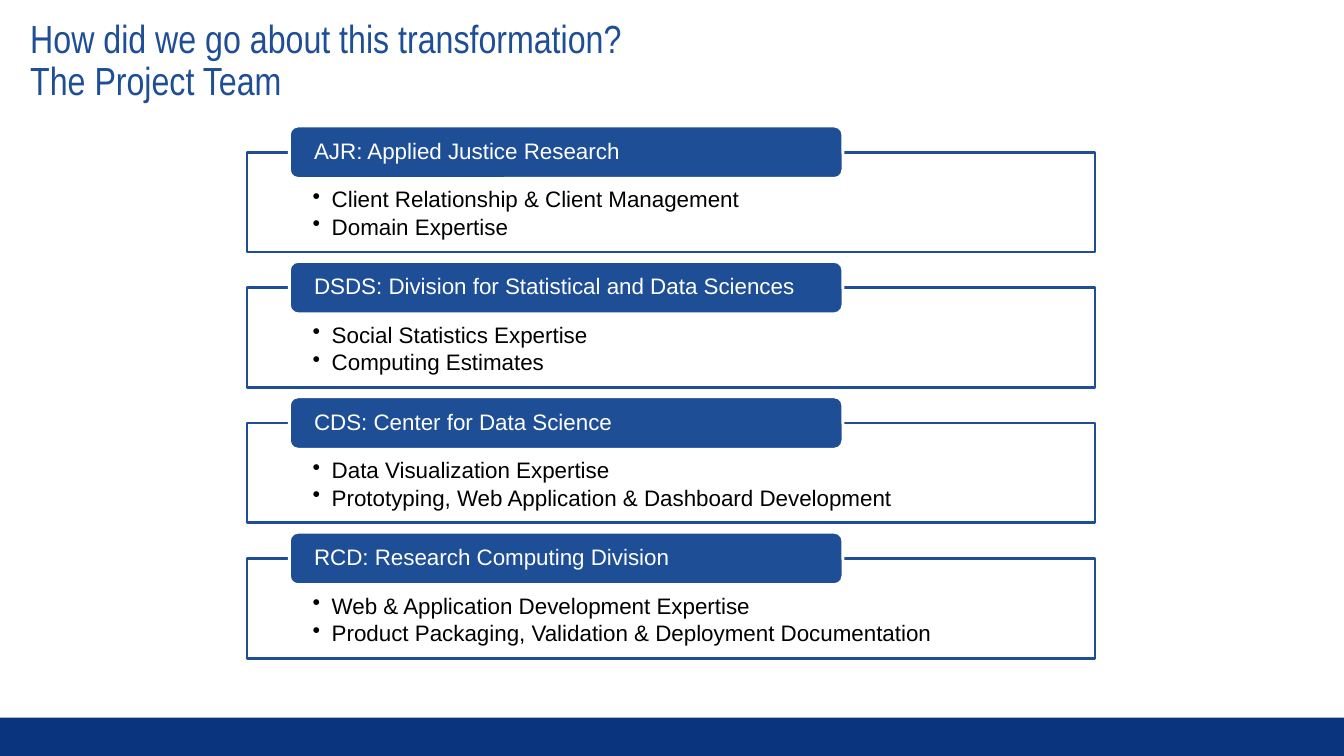
from dataclasses import dataclass

from lxml import etree
from pptx import Presentation
from pptx import util as u
from pptx.dml.color import RGBColor
from pptx.enum import shapes, text
from pptx.oxml import ns
from pptx.shapes.autoshape import Shape
from pptx.slide import Slide

COLOURS = {"blue": "1E4E96", "navy": "0A357E", "white": "FFFFFF", "black": "000000"}
FIRST_TOP, LAST_TOP = 1.51, 5.54


@dataclass(frozen=True)
class Division:
    """One division of the project team and what it brings."""

    name: str
    duties: tuple[str, ...]


DIVISIONS = (
    Division("AJR: Applied Justice Research",
             ("Client Relationship & Client Management", "Domain Expertise")),
    Division("DSDS: Division for Statistical and Data Sciences",
             ("Social Statistics Expertise", "Computing Estimates")),
    Division("CDS: Center for Data Science",
             ("Data Visualization Expertise",
              "Prototyping, Web Application & Dashboard Development")),
    Division("RCD: Research Computing Division",
             ("Web & Application Development Expertise",
              "Product Packaging, Validation & Deployment Documentation")),
)


def colour(name: str) -> RGBColor:
    """Return the named colour."""
    return RGBColor.from_string(COLOURS[name])


def write(shape: Shape, lines: tuple[str, ...], *, ink: str,
          insets: tuple[float, float, float, float], size: float = 16,
          font: str = "Arial", middle: bool = True, bulleted: bool = False,
          space_after: float = 0) -> None:
    """Fill a shape with left-aligned paragraphs in one format."""
    frame = shape.text_frame
    frame.word_wrap = True
    frame.auto_size = text.MSO_AUTO_SIZE.NONE
    frame.vertical_anchor = text.MSO_ANCHOR.MIDDLE if middle else text.MSO_ANCHOR.TOP
    (frame.margin_left, frame.margin_top,
     frame.margin_right, frame.margin_bottom) = map(u.Inches, insets)
    frame.text = "\n".join(lines)
    for paragraph in frame.paragraphs:
        paragraph.alignment = text.PP_ALIGN.LEFT
        paragraph.line_spacing = 0.9
        paragraph.space_after = u.Pt(space_after)
        for run in paragraph.runs:
            run.font.name = font
            run.font.size = u.Pt(size)
            run.font.color.rgb = colour(ink)
        if bulleted:
            properties = paragraph._p.get_or_add_pPr()
            properties.set("marL", str(u.Inches(0.19)))
            properties.set("indent", str(u.Inches(-0.19)))
            etree.SubElement(properties, ns.qn("a:buChar"), char="•")


def add_box(slide: Slide, kind: shapes.MSO_SHAPE,
            place: tuple[float, float, float, float], fill: str,
            outline: str | None = None, opacity: int = 100) -> Shape:
    """Add a filled preset shape, outlined if a colour is given."""
    box = slide.shapes.add_shape(kind, *map(u.Inches, place))
    box.shadow.inherit = False
    box.fill.solid()
    box.fill.fore_color.rgb = colour(fill)
    if opacity < 100:
        shade = box._element.spPr.find(".//" + ns.qn("a:srgbClr"))
        etree.SubElement(shade, ns.qn("a:alpha"), val=str(opacity * 1000))
    if outline:
        box.line.color.rgb = colour(outline)
        box.line.width = u.Pt(2)
    else:
        box.line.fill.background()
    return box


def add_division(slide: Slide, division: Division, top: float) -> None:
    """Draw a division's duties with its name tab over the upper edge."""
    duties = add_box(slide, shapes.MSO_SHAPE.RECTANGLE, (2.45, top, 8.41, 0.99),
                     "white", "blue", opacity=90)
    write(duties, division.duties, ink="black", insets=(0.65, 0.36, 0.65, 0.12),
          middle=False, bulleted=True, space_after=2.4)
    tab = add_box(slide, shapes.MSO_SHAPE.ROUNDED_RECTANGLE,
                  (2.87, top - 0.26, 5.49, 0.52), "blue", "white")
    write(tab, (division.name,), ink="white", insets=(0.22, 0, 0.22, 0))


def main() -> None:
    """Build and save the project team slide."""
    deck = Presentation()
    deck.slide_width, deck.slide_height = u.Inches(13.33), u.Inches(7.5)
    slide = deck.slides.add_slide(deck.slide_layouts[5])

    heading = slide.shapes.title
    heading.left, heading.top = u.Inches(0.2), u.Inches(0.2)
    heading.width, heading.height = u.Inches(12.89), u.Inches(0.83)
    write(heading, ("How did we go about this transformation?", "The Project Team"),
          ink="blue", insets=(0.1, 0.1, 0.2, 0.1), size=28, font="Arial Narrow")

    add_box(slide, shapes.MSO_SHAPE.RECTANGLE, (0, 7.12, 13.33, 0.38), "navy")
    pitch = (LAST_TOP - FIRST_TOP) / (len(DIVISIONS) - 1)
    for row, division in enumerate(DIVISIONS):
        add_division(slide, division, FIRST_TOP + row * pitch)

    deck.save("out.pptx")


if __name__ == "__main__":
    main()
